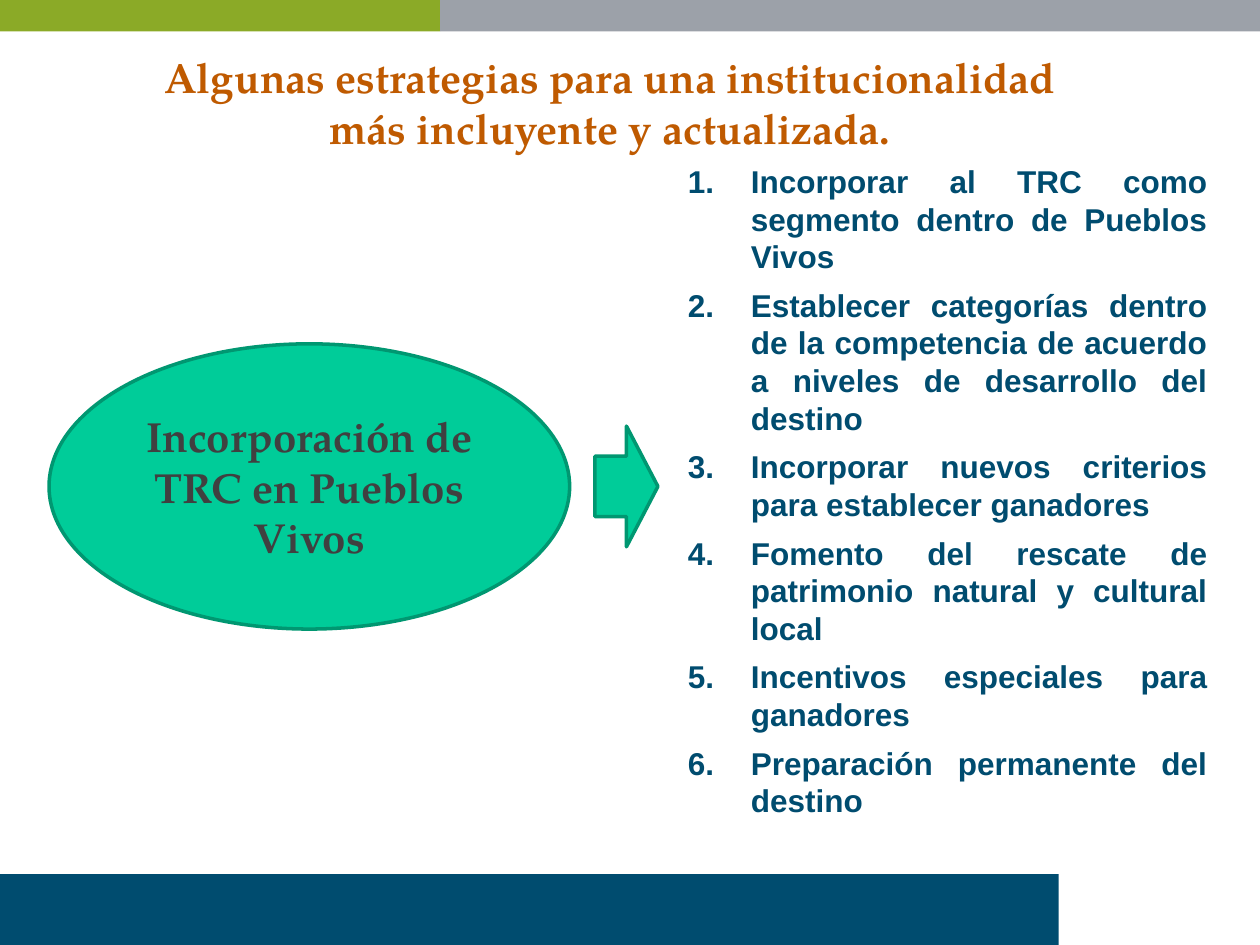
from lxml.etree import SubElement
from pptx import Presentation
from pptx.dml.color import RGBColor
from pptx.enum.shapes import MSO_SHAPE
from pptx.enum.text import MSO_ANCHOR, MSO_AUTO_SIZE, PP_ALIGN
from pptx.oxml.ns import qn
from pptx.util import Pt

COLORS = {
    "title": "BF5A00", "navy": "004C6F", "mint": "00CC99", "mint_edge": "009771",
    "ellipse_text": "404040", "green": "8BAA27", "gray": "9CA1A9",
}
SERIF, SANS = "TeX Gyre Pagella", "Arial"
WIDTH, HEIGHT = 720, 540

TITLE = "Algunas estrategias para una institucionalidad más incluyente y actualizada."
TOPIC = "Incorporación de TRC en Pueblos Vivos"
STRATEGIES = [
    "Incorporar al TRC como segmento dentro de Pueblos Vivos",
    "Establecer categorías dentro de la competencia de acuerdo a niveles de desarrollo del destino",
    "Incorporar nuevos criterios para establecer ganadores",
    "Fomento del rescate de patrimonio natural y cultural local",
    "Incentivos especiales para ganadores",
    "Preparación permanente del destino",
]


def color(name):
    return RGBColor.from_string(COLORS[name])


def apply_format(target, values):
    for name, value in values.items():
        setattr(target, name, value)


def write_paragraph(paragraph, text, font_name, size, color_name, alignment):
    paragraph.alignment = alignment
    run = paragraph.add_run()
    run.text = text
    apply_format(run.font, {"name": font_name, "size": Pt(size), "bold": True})
    run.font.color.rgb = color(color_name)


def add_block(slide, kind, box, fill, edge=None):
    shape = slide.shapes.add_shape(kind, *map(Pt, box))
    shape.shadow.inherit = False
    shape.fill.solid()
    shape.fill.fore_color.rgb = color(fill)
    if edge:
        shape.line.color.rgb = color(edge)
        shape.line.width = Pt(2)
    else:
        shape.line.fill.background()
    return shape


def add_title(slide, box):
    title = slide.shapes.title
    apply_format(title, dict(zip(("left", "top", "width", "height"), map(Pt, box))))
    frame = title.text_frame
    apply_format(frame, {"word_wrap": True, "auto_size": MSO_AUTO_SIZE.NONE,
                         "vertical_anchor": MSO_ANCHOR.TOP})
    write_paragraph(frame.paragraphs[0], TITLE, SERIF, 24, "title", PP_ALIGN.CENTER)


def add_strategies(slide, box):
    frame = slide.shapes.add_textbox(*map(Pt, box)).text_frame
    apply_format(frame, {"word_wrap": True, "vertical_anchor": MSO_ANCHOR.MIDDLE,
                         "margin_bottom": Pt(31)})
    for index, text in enumerate(STRATEGIES):
        paragraph = frame.add_paragraph() if index else frame.paragraphs[0]
        write_paragraph(paragraph, text, SANS, 18, "navy", PP_ALIGN.JUSTIFY)
        paragraph.space_before = Pt(6)
        # Automatic numbering with a hanging indent
        properties = paragraph._p.get_or_add_pPr()
        properties.set("marL", str(Pt(36)))
        properties.set("indent", str(Pt(-36)))
        SubElement(properties, qn("a:buFont"), typeface="+mj-lt")
        SubElement(properties, qn("a:buAutoNum"), type="arabicPeriod")


def add_topic(slide, box):
    left, top, width, height = box
    ellipse_width, arrow_width, arrow_height = 297.5, 36, 69
    ellipse = add_block(slide, MSO_SHAPE.OVAL, (left, top, ellipse_width, height),
                        "mint", "mint_edge")
    frame = ellipse.text_frame
    apply_format(frame, {"word_wrap": True, "vertical_anchor": MSO_ANCHOR.MIDDLE})
    write_paragraph(frame.paragraphs[0], TOPIC, SERIF, 24, "ellipse_text", PP_ALIGN.CENTER)
    # Arrow at the right edge, centred on the ellipse
    arrow_box = (left + width - arrow_width, top + (height - arrow_height) / 2,
                 arrow_width, arrow_height)
    add_block(slide, MSO_SHAPE.RIGHT_ARROW, arrow_box, "mint", "mint_edge")


def add_bands(slide, box):
    left, top, width, height = box
    split, top_height, foot_width, foot_height = 251.5, 18, 605, 40.5
    bands = [
        ((left, top, split, top_height), "green"),
        ((left + split, top, width - split, top_height), "gray"),
        ((left, top + height - foot_height, foot_width, foot_height), "navy"),
    ]
    for band_box, fill in bands:
        add_block(slide, MSO_SHAPE.RECTANGLE, band_box, fill)


def main():
    presentation = Presentation()
    presentation.slide_width, presentation.slide_height = Pt(WIDTH), Pt(HEIGHT)
    slide = presentation.slides.add_slide(presentation.slide_layouts[5])
    add_title(slide, (76.5, 26, 544, 65.5))
    add_strategies(slide, (386, 87, 311, 414))
    add_topic(slide, (28, 196.5, 348, 163))
    add_bands(slide, (0, 0, WIDTH, HEIGHT))
    presentation.save("out.pptx")


if __name__ == "__main__":
    main()
